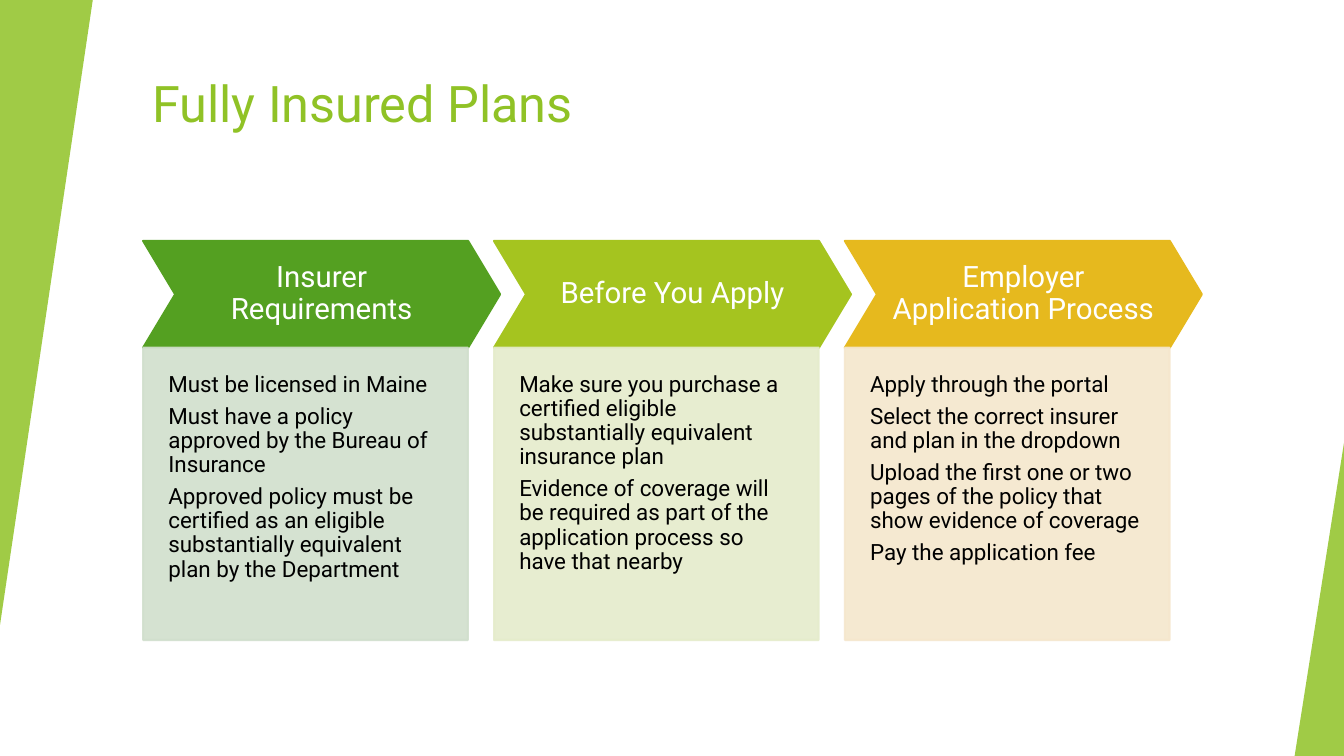
from lxml.etree import SubElement
from pptx import Presentation
from pptx.dml.color import RGBColor
from pptx.enum.shapes import MSO_SHAPE
from pptx.enum.text import MSO_ANCHOR, PP_ALIGN
from pptx.oxml.ns import qn
from pptx.util import Inches, Pt

LIME = RGBColor(0x90, 0xC2, 0x26)
GREEN = RGBColor(0x54, 0xA0, 0x21)
OLIVE = RGBColor(0xA5, 0xC4, 0x1F)
GOLD = RGBColor(0xE6, 0xB9, 0x1E)
PALE_GREEN = RGBColor(0xD1, 0xDF, 0xCD)
PALE_OLIVE = RGBColor(0xE5, 0xEC, 0xCB)
PALE_GOLD = RGBColor(0xF5, 0xE7, 0xCD)
WHITE = RGBColor(0xFF, 0xFF, 0xFF)
BLACK = RGBColor(0x00, 0x00, 0x00)

STEPS = [
    ("Insurer Requirements", GREEN, PALE_GREEN, [
        "Must be licensed in Maine",
        "Must have a policy approved by the Bureau of Insurance",
        "Approved policy must be certified as an eligible substantially equivalent plan by the Department",
    ]),
    ("Before You Apply", OLIVE, PALE_OLIVE, [
        "Make sure you purchase a certified eligible substantially equivalent insurance plan",
        "Evidence of coverage will be required as part of the application process so have that nearby",
    ]),
    ("Employer Application Process", GOLD, PALE_GOLD, [
        "Apply through the portal",
        "Select the correct insurer and plan in the dropdown",
        "Upload the first one or two pages of the policy that show evidence of coverage",
        "Pay the application fee",
    ]),
]


def add_panel(preset, left, top, width, height, color, opacity=100, outlined=True):
    panel = slide.shapes.add_shape(preset, Inches(left), Inches(top), Inches(width), Inches(height))
    panel.shadow.inherit = False
    panel.fill.solid()
    panel.fill.fore_color.rgb = color
    if outlined:
        panel.line.color.rgb = color
        panel.line.width = Pt(1.5)
    else:
        panel.line.fill.background()
    if opacity < 100:
        for solid_color in panel.fill._xPr.iter(qn("a:srgbClr")):
            SubElement(solid_color, qn("a:alpha"), val=str(opacity * 1000))
    return panel


def write_text(frame, lines, size, color, align, anchor, margins):
    frame.word_wrap = True
    frame.vertical_anchor = anchor
    frame.margin_left, frame.margin_top, frame.margin_right, frame.margin_bottom = map(Inches, margins)
    for index, line in enumerate(lines):
        paragraph = frame.add_paragraph() if index else frame.paragraphs[0]
        paragraph.alignment = align
        paragraph.line_spacing = 0.9
        paragraph.space_after = Pt(size * 0.35)
        run = paragraph.add_run()
        run.text = line
        run.font.name = "Roboto"
        run.font.size = Pt(size)
        run.font.color.rgb = color


presentation = Presentation()
presentation.slide_width = Inches(13.33)
presentation.slide_height = Inches(7.5)
slide = presentation.slides.add_slide(presentation.slide_layouts[5])

title = slide.shapes.title
title.left, title.top, title.width, title.height = map(Inches, (1.41, 0.67, 11.15, 1.2))
title.text_frame.vertical_anchor = MSO_ANCHOR.TOP
title_line = title.text_frame.paragraphs[0]
title_line.alignment = PP_ALIGN.LEFT
title_run = title_line.add_run()
title_run.text = "Fully Insured Plans"
title_run.font.name = "Roboto"
title_run.font.size = Pt(36)
title_run.font.color.rgb = LIME

for left, top, width, height, rotation in [(0, 0, 0.92, 6.2, 180), (12.84, 4.39, 0.49, 3.11, 0)]:
    edge_wedge = add_panel(MSO_SHAPE.ISOSCELES_TRIANGLE, left, top, width, height, LIME, 85, False)
    edge_wedge.adjustments[0] = 1
    edge_wedge.rotation = rotation

for index, (heading, strong, pale, details) in enumerate(STEPS):
    left = 1.42 + index * 3.48
    step_arrow = add_panel(MSO_SHAPE.CHEVRON, left, 2.39, 3.54, 1.06, strong)
    step_arrow.adjustments[0] = 0.3
    write_text(step_arrow.text_frame, [heading], 21, WHITE, PP_ALIGN.CENTER,
               MSO_ANCHOR.MIDDLE, (0.13, 0.13, 0.13, 0.13))
    step_details = add_panel(MSO_SHAPE.RECTANGLE, left, 3.45, 3.22, 2.9, pale, 90)
    write_text(step_details.text_frame, details, 16, BLACK, PP_ALIGN.LEFT,
               MSO_ANCHOR.TOP, (0.25, 0.25, 0.25, 0.51))

presentation.save("out.pptx")
